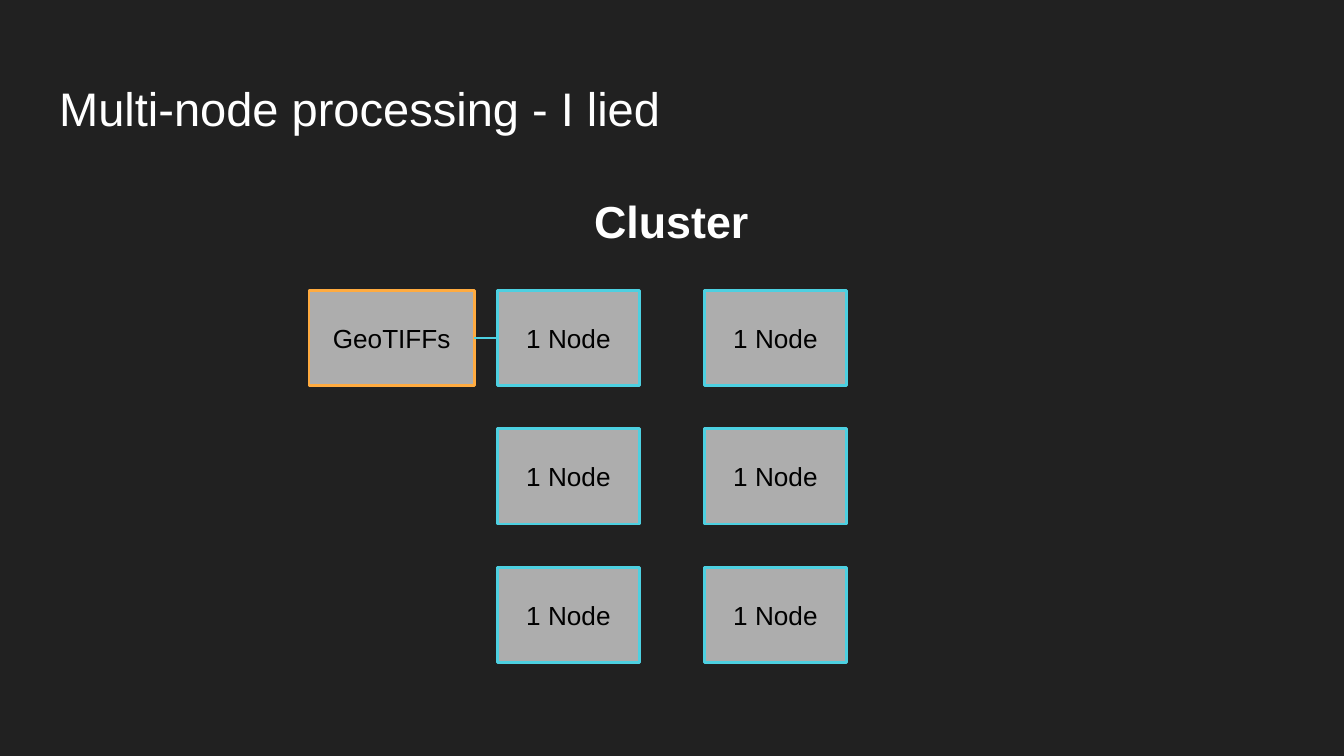
from pptx import Presentation
from pptx.dml.color import RGBColor
from pptx.enum.shapes import MSO_CONNECTOR, MSO_SHAPE
from pptx.enum.text import MSO_ANCHOR, PP_ALIGN
from pptx.oxml.ns import qn
from pptx.util import Inches, Pt
from lxml import etree

RECTANGLE = MSO_SHAPE.RECTANGLE
STRAIGHT = MSO_CONNECTOR.STRAIGHT
TOP = MSO_ANCHOR.TOP
MIDDLE = MSO_ANCHOR.MIDDLE
LEFT = PP_ALIGN.LEFT
CENTER = PP_ALIGN.CENTER
RIGHT_SITE, LEFT_SITE = 3, 1

COLORS = {
    "background": "212121",
    "light": "FFFFFF",
    "dark": "000000",
    "box": "ADADAD",
    "node": "4DD0E1",
    "data": "FFAB40",
}

GRID_LEFT, GRID_TOP = 3.7, 2.16
COLUMN_STEP, ROW_STEP = 1.54, 1.03
NODE_WIDTH, BOX_HEIGHT = 1.06, 0.71
ROWS, COLUMNS = 3, 2


def color(name):
    return RGBColor.from_string(COLORS[name])


def set_text(shape, text, size, color_name, anchor=TOP, alignment=CENTER, bold=False):
    frame = shape.text_frame
    frame.text = text
    frame.word_wrap = True
    frame.vertical_anchor = anchor
    frame.margin_left = frame.margin_right = Inches(0.1)
    frame.margin_top = frame.margin_bottom = Inches(0.1)
    paragraph = frame.paragraphs[0]
    paragraph.alignment = alignment
    font = paragraph.runs[0].font
    font.name = "Arial"
    font.size = Pt(size)
    font.bold = bold
    font.color.rgb = color(color_name)


def set_line(shape, color_name):
    shape.line.color.rgb = color(color_name)
    shape.line.width = Pt(1.5)


def add_title(slide, text):
    title = slide.shapes.title
    title.left, title.top = Inches(0.34), Inches(0.49)
    title.width, title.height = Inches(9.32), Inches(0.63)
    set_text(title, text, 25.2, "light", alignment=LEFT)


def add_heading(slide, text):
    heading = slide.shapes.add_textbox(
        Inches(3.98), Inches(1.34), Inches(2.03), Inches(0.61)
    )
    set_text(heading, text, 24, "light", bold=True)


def add_box(slide, text, left, top, width, line_color):
    box = slide.shapes.add_shape(
        RECTANGLE, Inches(left), Inches(top), Inches(width), Inches(BOX_HEIGHT)
    )
    box.shadow.inherit = False
    box.fill.solid()
    box.fill.fore_color.rgb = color("box")
    set_line(box, line_color)
    set_text(box, text, 14, "dark", anchor=MIDDLE)
    return box


def add_node_grid(slide):
    return [
        add_box(
            slide,
            "1 Node",
            GRID_LEFT + column * COLUMN_STEP,
            GRID_TOP + row * ROW_STEP,
            NODE_WIDTH,
            "node",
        )
        for row in range(ROWS)
        for column in range(COLUMNS)
    ]


def connect(slide, source, target):
    connector = slide.shapes.add_connector(STRAIGHT, 0, 0, 0, 0)
    connector.begin_connect(source, RIGHT_SITE)
    connector.end_connect(target, LEFT_SITE)
    set_line(connector, "node")
    etree.SubElement(connector._element.spPr, qn("a:effectLst"))


def main():
    presentation = Presentation()
    presentation.slide_width = Inches(10)
    presentation.slide_height = Inches(10) * 9 // 16
    slide = presentation.slides.add_slide(presentation.slide_layouts[5])
    slide.background.fill.solid()
    slide.background.fill.fore_color.rgb = color("background")

    add_title(slide, "Multi-node processing - I lied")
    nodes = add_node_grid(slide)
    add_heading(slide, "Cluster")
    geotiffs = add_box(slide, "GeoTIFFs", 2.3, GRID_TOP, 1.23, "data")
    connect(slide, geotiffs, nodes[0])

    presentation.save("out.pptx")


if __name__ == "__main__":
    main()
